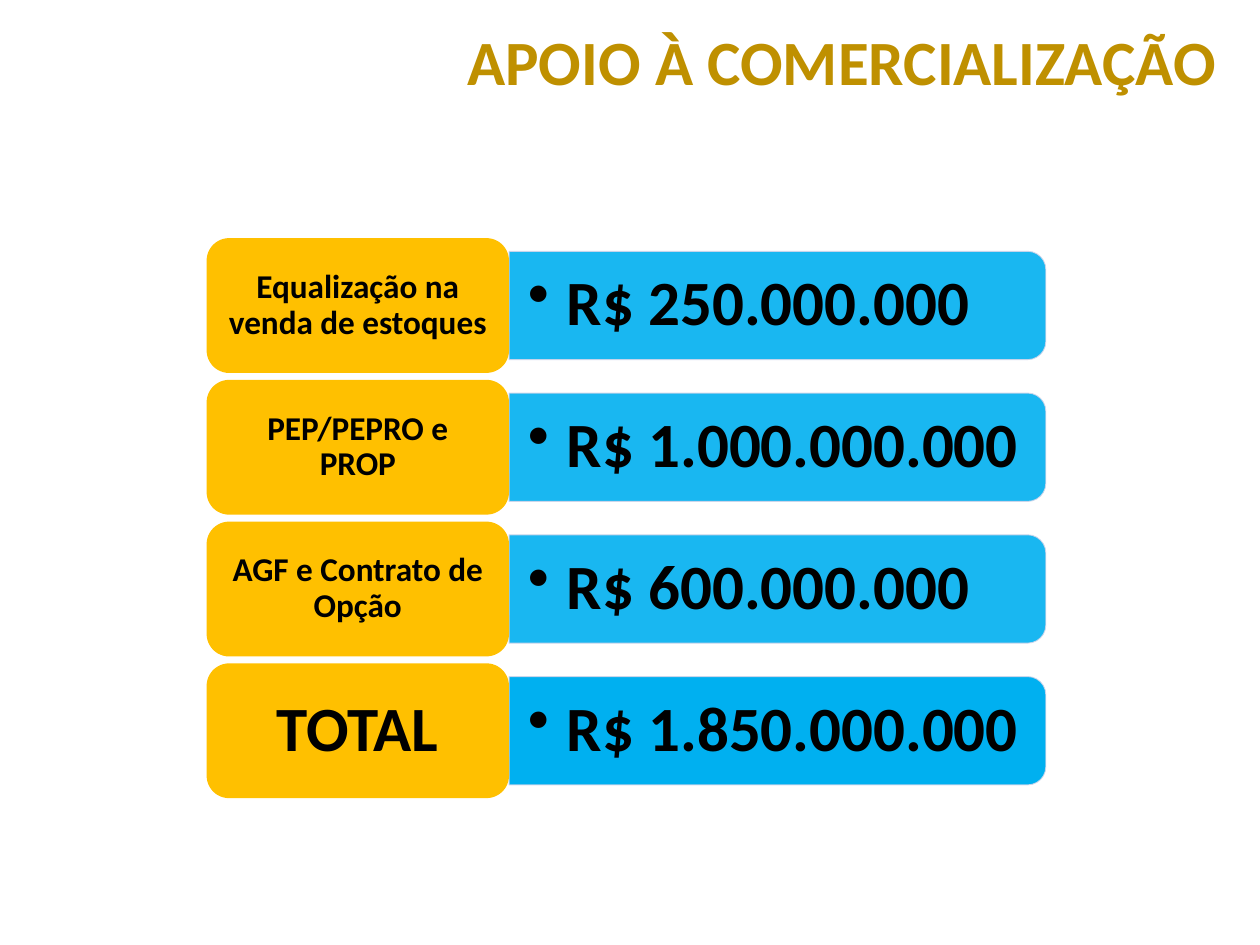
from lxml.etree import SubElement
from pptx import Presentation
from pptx.dml.color import RGBColor
from pptx.enum.shapes import MSO_SHAPE
from pptx.enum.text import MSO_ANCHOR, PP_ALIGN
from pptx.oxml.ns import qn
from pptx.util import Inches, Pt

TITLE = "APOIO À COMERCIALIZAÇÃO"
ROWS = [
    ("Equalização na venda de estoques", 19, "R$ 250.000.000", 90),
    ("PEP/PEPRO e\vPROP", 19, "R$ 1.000.000.000", 90),
    ("AGF e Contrato de Opção", 19, "R$ 600.000.000", 90),
    ("TOTAL", 36, "R$ 1.850.000.000", 100),
]

GOLD = RGBColor(0xBF, 0x90, 0x00)
AMBER = RGBColor(0xFF, 0xC0, 0x00)
BLUE = RGBColor(0x00, 0xB0, 0xF0)
PALE = RGBColor(0xCF, 0xD5, 0xEA)
BLACK = RGBColor(0, 0, 0)

WIDE, HIGH = 10, 7.5
LEFT, MID, RIGHT = 1.64, 4.04, 8.3
FIRST, PITCH = 2.425, 1.125
TAG_H, BAR_H, TEXT_H = 1.07, 0.86, 0.77


def box(x, y, w, h):
    return [Inches(v) for v in (x, y, w, h)]


def write(shape, text, size=36, color=BLACK, align=PP_ALIGN.LEFT,
          pad=(0.15, 0.07), bullet=False):
    frame = shape.text_frame
    frame.word_wrap = True
    frame.vertical_anchor = MSO_ANCHOR.MIDDLE
    frame.margin_left = frame.margin_right = Inches(pad[0])
    frame.margin_top = frame.margin_bottom = Inches(pad[1])
    para = frame.paragraphs[0]
    para.text = text
    para.alignment = align
    para.line_spacing = 0.9
    if bullet:
        para.level = 1
        props = para._p.get_or_add_pPr()
        props.set("marL", str(Inches(0.31)))
        props.set("indent", str(-Inches(0.31)))
        SubElement(props, qn("a:buChar")).set("char", "•")
    font = para.font
    for item in [font] + [run.font for run in para.runs]:
        item.name, item.size, item.bold = "Calibri", Pt(size), True
        item.color.rgb = color


def fade(fill, share):
    tint = fill._xPr.find(".//" + qn("a:srgbClr"))
    SubElement(tint, qn("a:alpha")).set("val", str(share * 1000))


def draw(kind, place, color):
    shape = slide.shapes.add_shape(kind, *place)
    shape.shadow.inherit = False
    shape.fill.solid()
    shape.fill.fore_color.rgb = color
    shape.line.fill.background()
    return shape


deck = Presentation()
deck.slide_width, deck.slide_height = Inches(WIDE), Inches(HIGH)
slide = deck.slides.add_slide(deck.slide_layouts[6])

head = slide.shapes.add_textbox(*box(2.27, 0.19, 7.48, 0.66))
write(head, TITLE, color=GOLD, align=PP_ALIGN.RIGHT, pad=(0.1, 0.05))

span = RIGHT - MID
for i, (label, size, value, share) in enumerate(ROWS):
    y = FIRST + i * PITCH
    bar = draw(MSO_SHAPE.ROUND_2_SAME_RECTANGLE,
               box((MID + RIGHT - BAR_H) / 2, y - span / 2, BAR_H, span), BLUE)
    bar.rotation = 90
    bar.line.color.rgb = PALE
    bar.line.width = Pt(0.5)
    fade(bar.fill, share)
    fade(bar.line.fill, 90)

    sum_box = slide.shapes.add_textbox(*box(MID, y - TEXT_H / 2, span, TEXT_H))
    write(sum_box, value, bullet=True)

    tag = draw(MSO_SHAPE.ROUNDED_RECTANGLE,
               box(LEFT, y - TAG_H / 2, MID - LEFT, TAG_H), AMBER)
    write(tag, label, size=size, align=PP_ALIGN.CENTER, pad=(0.08, 0.04))

deck.save("out.pptx")
